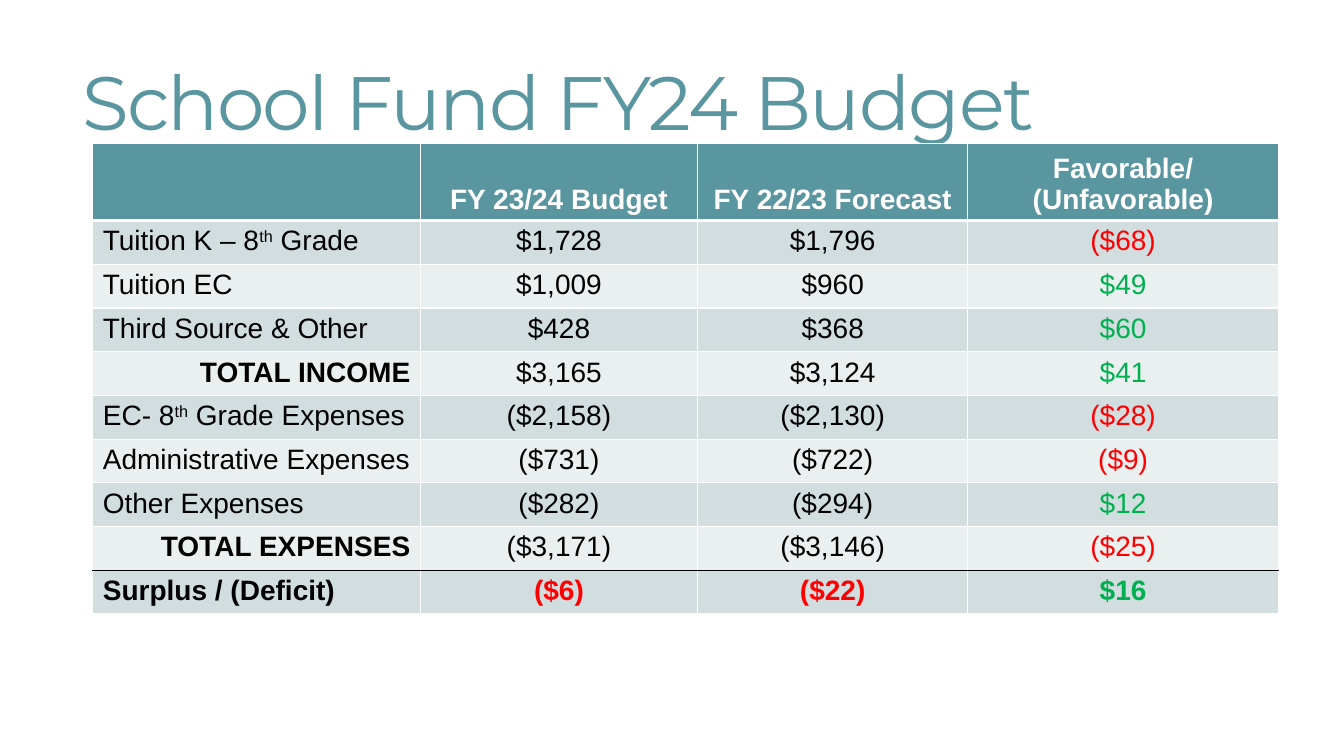
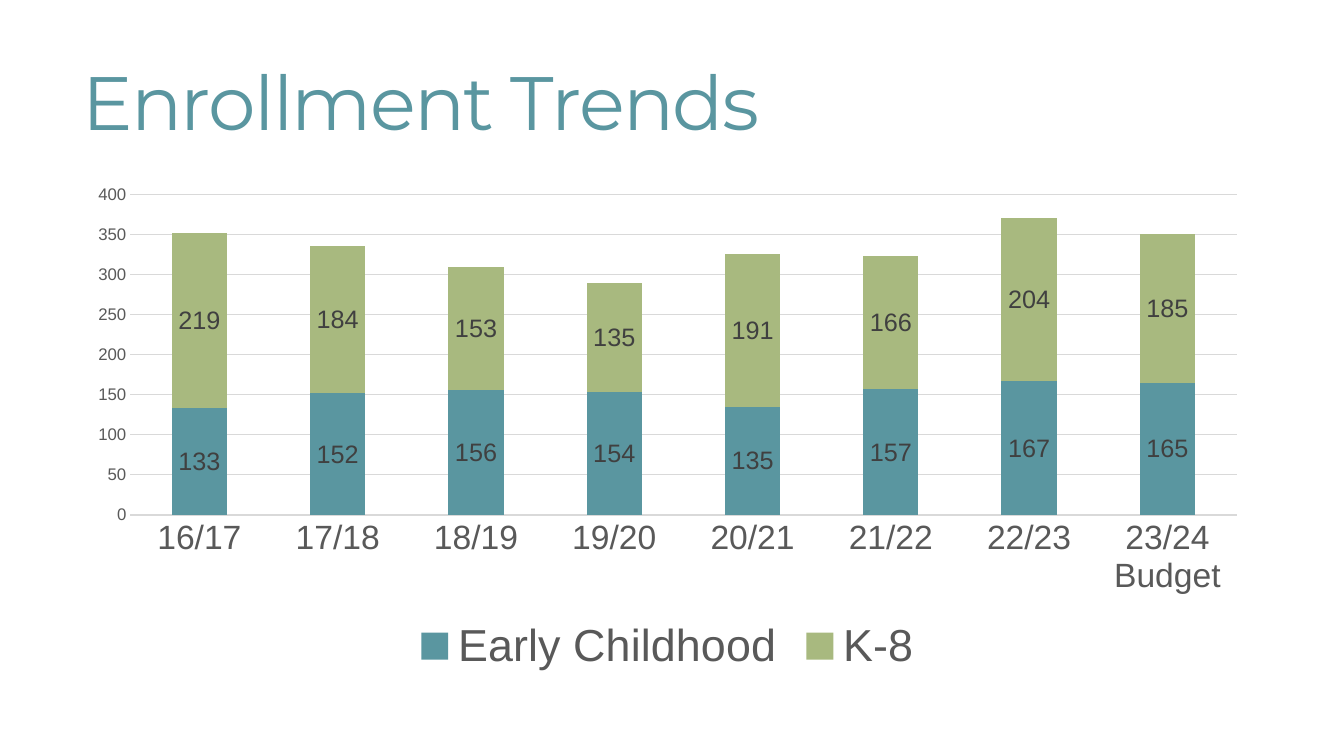
from lxml import etree
from pptx import Presentation
from pptx.chart.data import CategoryChartData
from pptx.dml.color import RGBColor
from pptx.enum.chart import XL_CHART_TYPE as ChartType, XL_LEGEND_POSITION as LegendPosition
from pptx.enum.chart import XL_TICK_MARK as TickMark
from pptx.enum.text import MSO_ANCHOR as Anchor, PP_ALIGN as Align
from pptx.oxml import parse_xml
from pptx.oxml.ns import nsdecls
from pptx.util import Inches, Pt

COLORS = {
    "teal": "5A96A0", "green": "A8B97F", "white": "FFFFFF", "black": "000000",
    "band_dark": "D2DDDF", "band_light": "EAEFF0", "gain": "00B050", "loss": "FF0000",
    "axis_text": "595959", "label_text": "404040", "grid": "D9D9D9",
}
BODY_FONT, TITLE_FONT = "Arial", "Montserrat"

deck = Presentation()
deck.slide_width, deck.slide_height = Inches(13.33), Inches(7.5)


def place(left, top, width, height):
    wide, high = deck.slide_width / 100, deck.slide_height / 100
    return int(left * wide), int(top * high), int(width * wide), int(height * high)


def style(font, size, color, name=BODY_FONT, bold=False):
    font.size, font.name, font.bold = Pt(size), name, bold
    font.color.rgb = RGBColor.from_string(COLORS[color])


slides = []
for heading in ("School Fund FY24 Budget", "Enrollment Trends"):
    slide = deck.slides.add_slide(deck.slide_layouts[6])
    title = slide.shapes.add_textbox(*place(5.4, 7.33, 88.37, 13.87)).text_frame
    title.word_wrap = True
    title.vertical_anchor = Anchor.MIDDLE
    title.paragraphs[0].line_spacing = 0.85
    run = title.paragraphs[0].add_run()
    run.text = heading
    style(run.font, 54, "teal", TITLE_FONT)
    run._r.get_or_add_rPr().set("spc", "-120")
    slides.append(slide)
budget_slide, enrollment_slide = slides

budget_rows = [
    ("", "FY 23/24 Budget", "FY 22/23 Forecast", "Favorable/ (Unfavorable)"),
    ("Tuition K – 8^th^ Grade", "$1,728", "$1,796", "($68)"),
    ("Tuition EC", "$1,009", "$960", "$49"),
    ("Third Source & Other", "$428", "$368", "$60"),
    ("TOTAL INCOME", "$3,165", "$3,124", "$41"),
    ("EC- 8^th^ Grade Expenses", "($2,158)", "($2,130)", "($28)"),
    ("Administrative Expenses", "($731)", "($722)", "($9)"),
    ("Other Expenses", "($282)", "($294)", "$12"),
    ("TOTAL EXPENSES", "($3,171)", "($3,146)", "($25)"),
    ("Surplus / (Deficit)", "($6)", "($22)", "$16"),
]
column_shares = (24.38, 20.63, 20.11, 23.11)
header_share, row_share = 9.6, 5.47
last_row = len(budget_rows) - 1

budget = budget_slide.shapes.add_table(
    len(budget_rows), len(column_shares),
    *place(6.9, 18.93, sum(column_shares), header_share + last_row * row_share)).table
budget.first_row = budget.horz_banding = False
for column, share in zip(budget.columns, column_shares):
    column.width = int(deck.slide_width * share / 100)

for r, entries in enumerate(budget_rows):
    is_header, is_result = r == 0, r == last_row
    budget.rows[r].height = int(deck.slide_height * (header_share if is_header else row_share) / 100)
    band = "teal" if is_header else "band_dark" if r % 2 else "band_light"
    edges = {"L": ("white", 1), "R": ("white", 1),
             "T": ("black" if is_result else "white", 3 if r == 1 else 1),
             "B": ("black" if r == last_row - 1 else "white", 3 if is_header else 1)}
    for c, entry in enumerate(entries):
        cell = budget.cell(r, c)
        for side, (color, width) in edges.items():
            border = parse_xml(f'<a:ln{side} {nsdecls("a")} w="{Pt(width)}"/>')
            paint = etree.SubElement(border, border.tag.replace(f"ln{side}", "solidFill"))
            etree.SubElement(paint, paint.tag.replace("solidFill", "srgbClr"), val=COLORS[color])
            cell._tc.get_or_add_tcPr().append(border)
        cell.fill.solid()
        cell.fill.fore_color.rgb = RGBColor.from_string(COLORS[band])
        cell.vertical_anchor = Anchor.BOTTOM if is_header else Anchor.TOP

        is_total = c == 0 and entry.startswith("TOTAL")
        if is_header:
            ink = "white"
        elif c == 3 or (is_result and c > 0):
            ink = "loss" if entry.startswith("(") else "gain"
        else:
            ink = "black"
        line = cell.text_frame.paragraphs[0]
        line.alignment = Align.CENTER if c else Align.RIGHT if is_total else Align.LEFT
        for i, piece in enumerate(entry.split("^")):
            run = line.add_run()
            run.text = piece
            style(run.font, 20, ink, bold=is_header or is_result or is_total)
            if i % 2:
                run._r.get_or_add_rPr().set("baseline", "30000")

enrollment = CategoryChartData()
enrollment.categories = ["16/17", "17/18", "18/19", "19/20", "20/21", "21/22", "22/23", "23/24 Budget"]
enrollment.add_series("Early Childhood", (133, 152, 156, 154, 135, 157, 167, 165))
enrollment.add_series("K-8", (219, 184, 153, 135, 191, 166, 204, 185))
trend = enrollment_slide.shapes.add_chart(
    ChartType.COLUMN_STACKED, *place(5.55, 23.2, 88.22, 66.8), enrollment).chart
trend.has_title = False
style(trend.font, 10, "black")

trend.has_legend = True
trend.legend.position = LegendPosition.BOTTOM
trend.legend.include_in_layout = False
style(trend.legend.font, 32, "axis_text")

years, pupils = trend.category_axis, trend.value_axis
for axis, size in ((years, 24), (pupils, 12)):
    axis.major_tick_mark = axis.minor_tick_mark = TickMark.NONE
    style(axis.tick_labels.font, size, "axis_text")
pupils.minimum_scale, pupils.maximum_scale, pupils.major_unit = 0, 400, 50
pupils.format.line.fill.background()
for rule in (years.format.line, pupils.major_gridlines.format.line):
    rule.width = Pt(0.75)
    rule.color.rgb = RGBColor.from_string(COLORS["grid"])

columns = trend.plots[0]
columns.gap_width, columns.overlap, columns.vary_by_categories = 150, 100, False
for series, color in zip(columns.series, ("teal", "green")):
    series.format.fill.solid()
    series.format.fill.fore_color.rgb = RGBColor.from_string(COLORS[color])
    series.data_labels.show_value = True
    style(series.data_labels.font, 18, "label_text")

deck.save("out.pptx")
